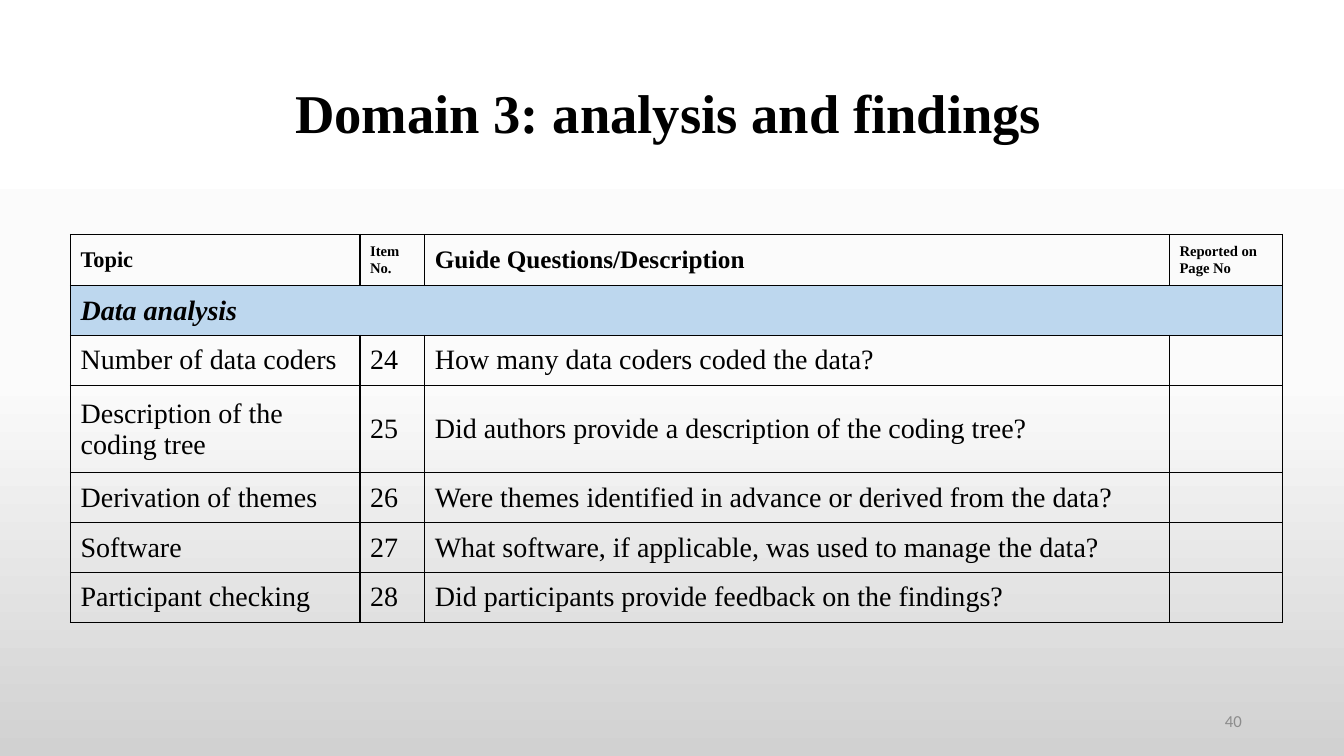
from dataclasses import dataclass

import pptx
import pptx.dml.color
import pptx.enum.text
import pptx.oxml
import pptx.oxml.ns
import pptx.util

Pt = pptx.util.Pt
RGB = pptx.dml.color.RGBColor.from_string
ALIGN = pptx.enum.text.PP_ALIGN
MIDDLE = pptx.enum.text.MSO_ANCHOR.MIDDLE


@dataclass(frozen=True)
class Theme:
    font: str = "Times New Roman"
    number_font: str = "Calibri"
    ink: str = "000000"
    muted: str = "8C8C8C"
    section_fill: str = "BDD7EE"
    backdrop: tuple = ((0, "FFFFFF"), (50, "FBFBFB"), (100, "D1D1D1"))
    title_size: float = 39
    body_size: float = 20
    header_sizes: tuple = (16, 10.5, 18, 10.5)
    number_size: float = 12
    border: float = 1


THEME = Theme()
HEADER = ("Topic", "Item No.", "Guide Questions/Description", "Reported on Page No")
SECTION = "Data analysis"
FIRST_ITEM = 24
ITEMS = (
    ("Number of data coders", "How many data coders coded the data?"),
    ("Description of the coding tree",
     "Did authors provide a description of the coding tree?"),
    ("Derivation of themes",
     "Were themes identified in advance or derived from the data?"),
    ("Software", "What software, if applicable, was used to manage the data?"),
    ("Participant checking", "Did participants provide feedback on the findings?"),
)
COLUMN_WIDTHS = (206.8, 46.2, 532, 81)
ROW_HEIGHTS = (36.6, 35.6, 35.6, 62.6, 35.6, 35.6, 35.6)


def paint_background(slide):
    fill = slide.background.fill
    fill.gradient()
    fill.gradient_angle = 270
    stops = slide.element.find(".//" + pptx.oxml.ns.qn("a:gsLst"))
    stops.clear()
    for percent, color in THEME.backdrop:
        stops.append(pptx.oxml.parse_xml(
            f'<a:gs {pptx.oxml.ns.nsdecls("a")} pos="{percent * 1000}">'
            f'<a:srgbClr val="{color}"/></a:gs>'))


def write(frame, text, size, font=THEME.font, color=THEME.ink,
          bold=False, italic=False, align=ALIGN.LEFT):
    """Fill a text frame with one uniformly styled paragraph."""
    frame.text = text
    frame.word_wrap = True
    paragraph = frame.paragraphs[0]
    paragraph.alignment = align
    style = paragraph.font
    style.name, style.size = font, Pt(size)
    style.bold, style.italic = bold, italic
    style.color.rgb = RGB(color)
    return paragraph


def add_title(slide, text):
    title = slide.shapes.title
    title.left, title.top = Pt(-31.7), Pt(47.5)
    title.width, title.height = Pt(1018), Pt(70.6)
    title.text_frame.vertical_anchor = MIDDLE
    heading = write(title.text_frame, text, THEME.title_size,
                    bold=True, align=ALIGN.CENTER)
    heading.line_spacing = 0.9


def add_borders(cell):
    properties = cell._tc.get_or_add_tcPr()
    for position, side in enumerate("LRTB"):
        properties.insert(position, pptx.oxml.parse_xml(
            f'<a:ln{side} {pptx.oxml.ns.nsdecls("a")} w="{Pt(THEME.border)}">'
            f'<a:solidFill><a:srgbClr val="{THEME.ink}"/></a:solidFill>'
            f'</a:ln{side}>'))


def add_checklist(slide):
    frame = slide.shapes.add_table(
        len(ROW_HEIGHTS), len(COLUMN_WIDTHS), Pt(50.4), Pt(167.4),
        Pt(sum(COLUMN_WIDTHS)), Pt(sum(ROW_HEIGHTS)))
    table = frame.table
    table.first_row = table.horz_banding = False
    for column, width in zip(table.columns, COLUMN_WIDTHS):
        column.width = Pt(width)
    for row, height in zip(table.rows, ROW_HEIGHTS):
        row.height = Pt(height)

    items = [(topic, str(number), question, "")
             for number, (topic, question) in enumerate(ITEMS, FIRST_ITEM)]
    for r, texts in enumerate([HEADER, (SECTION, "", "", ""), *items]):
        is_header, is_section = r == 0, r == 1
        for c, text in enumerate(texts):
            cell = table.cell(r, c)
            cell.vertical_anchor = MIDDLE
            size = THEME.header_sizes[c] if is_header else THEME.body_size
            write(cell.text_frame, text, size,
                  bold=is_header or is_section, italic=is_section)
            if is_section:
                cell.fill.solid()
                cell.fill.fore_color.rgb = RGB(THEME.section_fill)
            else:
                cell.fill.background()
            add_borders(cell)
    table.cell(1, 0).merge(table.cell(1, len(COLUMN_WIDTHS) - 1))


def add_page_number(slide, number):
    box = slide.shapes.add_textbox(Pt(678.2), Pt(500.4), Pt(216), Pt(28.8))
    box.text_frame.vertical_anchor = MIDDLE
    write(box.text_frame, number, THEME.number_size, font=THEME.number_font,
          color=THEME.muted, align=ALIGN.RIGHT)


def main():
    deck = pptx.Presentation()
    deck.slide_width, deck.slide_height = Pt(960), Pt(540)
    slide = deck.slides.add_slide(deck.slide_layouts.get_by_name("Title Only"))
    paint_background(slide)
    add_title(slide, "Domain 3: analysis and findings")
    add_checklist(slide)
    add_page_number(slide, "40")
    deck.save("out.pptx")


if __name__ == "__main__":
    main()
